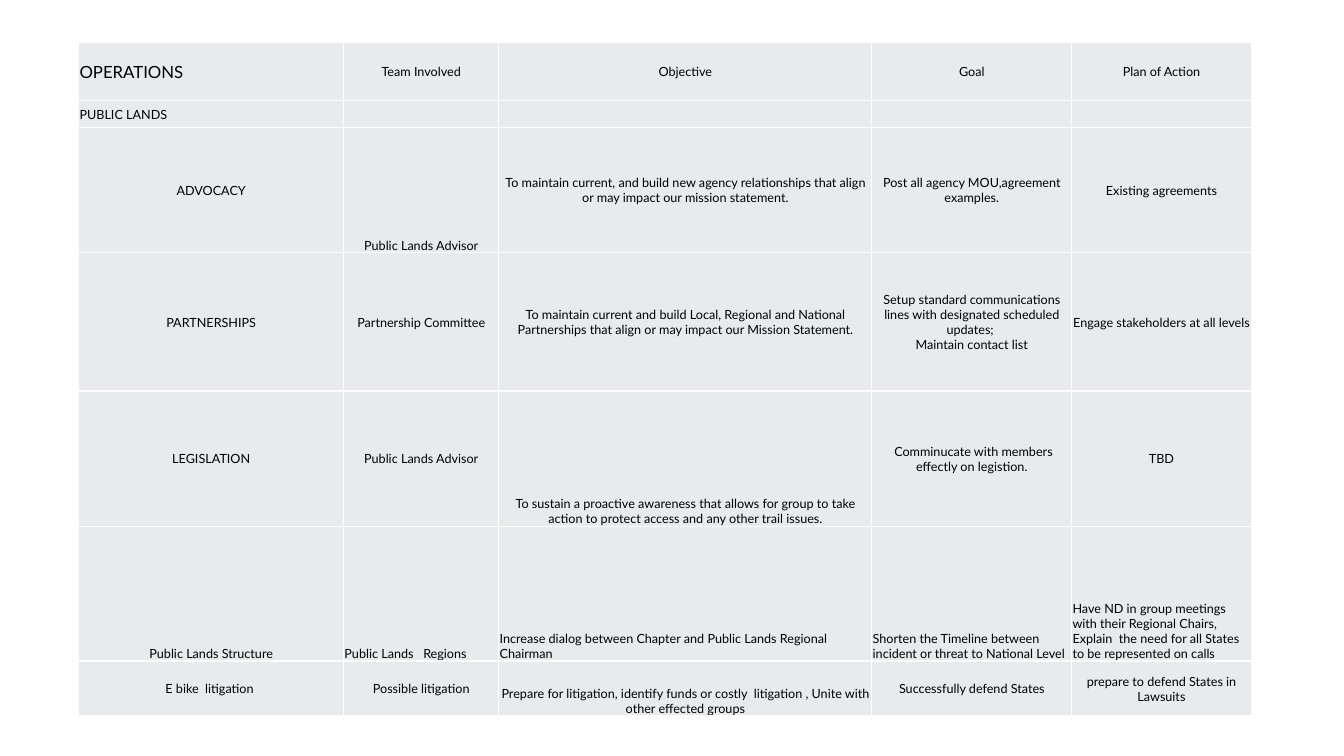
from lxml import etree
from pptx import Presentation
from pptx import util as u
from pptx.dml.color import RGBColor
from pptx.enum import text
from pptx.oxml import ns

BLACK = RGBColor(0x00, 0x00, 0x00)
WHITE = RGBColor(0xFF, 0xFF, 0xFF)
PALE_GREY = RGBColor(0xE8, 0xEA, 0xED)
FONT = "Lato"
TITLE_SIZE, BODY_SIZE = 12, 9

COLUMN_WIDTHS = [189.2, 110.8, 266.4, 142.7, 128.2]
ROW_HEIGHTS = [41.3, 19.4, 89.6, 98.8, 96.6, 96.3, 39.3]
PLAN = [
    ["OPERATIONS", "Team Involved", "Objective", "Goal", "Plan of Action"],
    ["PUBLIC LANDS", "", "", "", ""],
    ["ADVOCACY", "Public Lands Advisor",
     "To maintain current, and build new agency relationships that align or may impact our mission statement.",
     "Post all agency MOU,agreement examples.", "Existing agreements"],
    ["PARTNERSHIPS", "Partnership Committee",
     "To maintain current and build Local, Regional and National Partnerships that align or may impact "
     "our Mission Statement.",
     "Setup standard communications lines with designated scheduled updates; \vMaintain contact list",
     "Engage stakeholders at all levels"],
    ["LEGISLATION", "Public Lands Advisor",
     "To sustain a proactive awareness that allows for group to take action to protect access and any "
     "other trail issues.",
     " Comminucate with members effectly on legistion.", "TBD"],
    ["Public Lands Structure", "Public Lands   Regions",
     "Increase dialog between Chapter and Public Lands Regional Chairman",
     "Shorten the Timeline between incident or threat to National Level",
     "Have ND in group meetings with their Regional Chairs, Explain  the need for all States to be "
     "represented on calls"],
    ["E bike  litigation ", "Possible litigation",
     "Prepare for litigation, identify funds or costly  litigation , Unite with other effected groups",
     "Successfully defend States", "prepare to defend States in Lawsuits"],
]
STRUCTURE_ROW = 5
LEFT_ALIGNED = {(0, 0), (1, 0)} | {(STRUCTURE_ROW, c) for c in range(1, 5)}
BOTTOM_ANCHORED = {(2, 1), (4, 2), (6, 2)} | {(STRUCTURE_ROW, c) for c in range(5)}


def add_borders(cell):
    """Draw a thin white line on every side of the cell."""
    properties = cell._tc.get_or_add_tcPr()
    for position, side in enumerate(("lnL", "lnR", "lnT", "lnB")):
        border = etree.Element(ns.qn(f"a:{side}"), w=str(u.Pt(1)))
        fill = etree.SubElement(border, ns.qn("a:solidFill"))
        etree.SubElement(fill, ns.qn("a:srgbClr"), val=str(WHITE))
        properties.insert(position, border)


def fill_cell(cell, wording, size, left_aligned, bottom_anchored):
    """Write and format one cell of the plan."""
    cell.fill.solid()
    cell.fill.fore_color.rgb = PALE_GREY
    add_borders(cell)
    cell.margin_left = cell.margin_right = cell.margin_top = u.Pt(0.6)
    cell.margin_bottom = 0
    cell.vertical_anchor = text.MSO_ANCHOR.BOTTOM if bottom_anchored else text.MSO_ANCHOR.MIDDLE
    cell.text = wording
    paragraph = cell.text_frame.paragraphs[0]
    paragraph.alignment = text.PP_ALIGN.LEFT if left_aligned else text.PP_ALIGN.CENTER
    paragraph.font.name = FONT
    paragraph.font.size = u.Pt(size)
    paragraph.font.color.rgb = BLACK
    if not wording:
        etree.SubElement(paragraph._p, ns.qn("a:endParaRPr"), sz=str(size * 100))


def add_plan(slide, left, top, width, height):
    """Place the operations plan table in the given box."""
    plan = slide.shapes.add_table(
        len(PLAN), len(PLAN[0]), u.Pt(left), u.Pt(top), u.Pt(width), u.Pt(height)).table
    plan.first_row = plan.horz_banding = False
    for column, share in zip(plan.columns, COLUMN_WIDTHS):
        column.width = u.Pt(width * share / sum(COLUMN_WIDTHS))
    for row, share in zip(plan.rows, ROW_HEIGHTS):
        row.height = u.Pt(height * share / sum(ROW_HEIGHTS))
    for r, entries in enumerate(PLAN):
        for c, wording in enumerate(entries):
            size = TITLE_SIZE if (r, c) == (0, 0) else BODY_SIZE
            fill_cell(plan.cell(r, c), wording, size, (r, c) in LEFT_ALIGNED, (r, c) in BOTTOM_ANCHORED)


def main():
    """Build the slide and save it."""
    deck = Presentation()
    deck.slide_width, deck.slide_height = u.Pt(960), u.Pt(540)
    slide = deck.slides.add_slide(deck.slide_layouts[6])
    add_plan(slide, 56.2, 30.3, 837.6, 481.3)
    deck.save("out.pptx")


if __name__ == "__main__":
    main()
